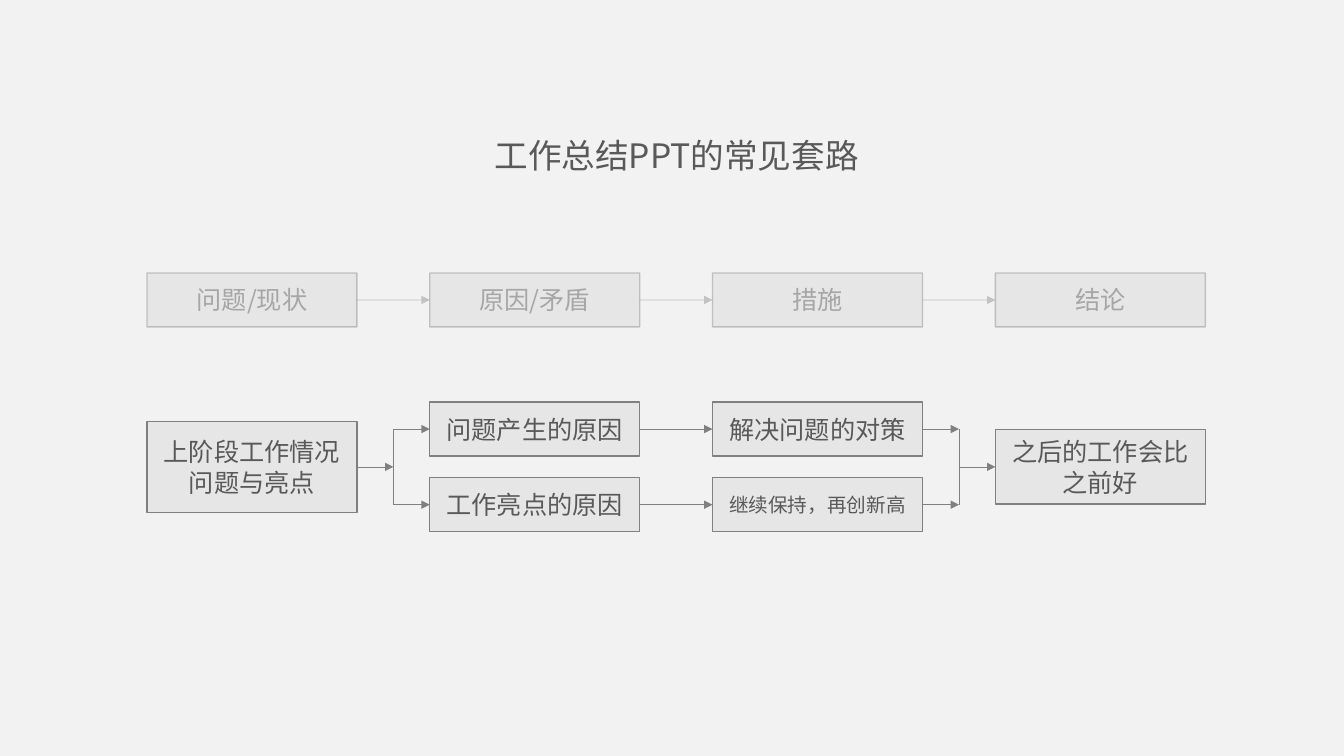
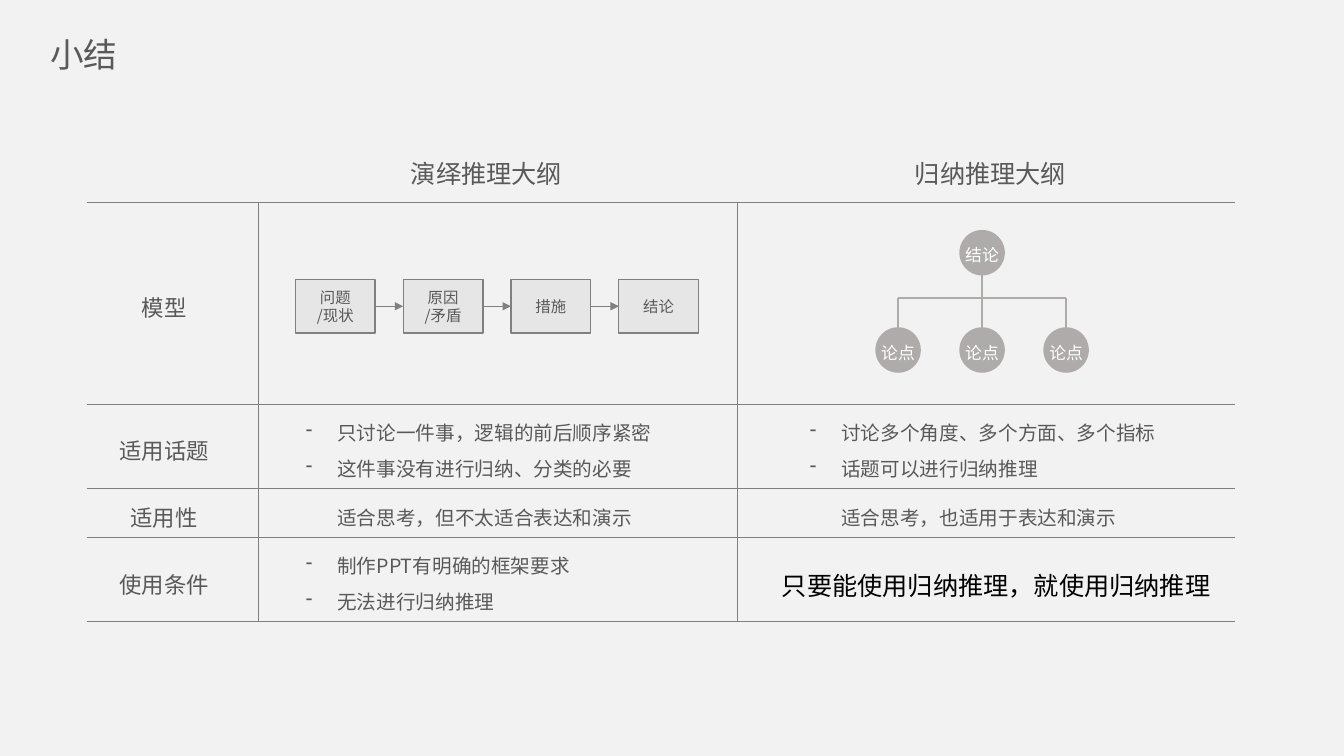
"""Builds two slides on outlining a work summary: a flow and a comparison table."""
from dataclasses import dataclass
from typing import Any, Sequence, Union

from lxml import etree
from pptx import Presentation
from pptx import util as u
from pptx.dml.color import RGBColor
from pptx.enum import shapes, text
from pptx.oxml.ns import qn

FONT = "Noto Sans CJK SC"
PAPER, PANEL, LINE, INK = "F2F2F2", "E7E6E6", "808080", "595959"
FADED, NODE, WHITE, BLACK = "A6A6A6", "AFABAB", "FFFFFF", "000000"
CENTER, LEFT = text.PP_ALIGN.CENTER, text.PP_ALIGN.LEFT
MIDDLE = text.MSO_ANCHOR.MIDDLE
HANGING = 22.5
LOOSE = 1.25
STEPS = (("问题", "/现状"), ("原因", "/矛盾"), ("措施",), ("结论",))
Point = tuple[float, float]


@dataclass(frozen=True)
class Box:
    lines: Sequence[str]
    x: float
    y: float
    width: float
    height: float
    size: float = 18
    ink: str = INK
    alpha: int = 100


@dataclass(frozen=True)
class Entry:
    lines: Sequence[str]
    inset: float
    size: float = 14
    ink: str = INK
    align: Any = LEFT
    indent: float = 0
    bullet: str = ""


def color(code: str) -> RGBColor:
    return RGBColor.from_string(code)


def add_xml(parent: Any, tag: str, **attributes: str) -> Any:
    return etree.SubElement(parent, qn(tag), attributes)


def write(frame: Any, lines: Sequence[str], *, size: float = 18, ink: str = INK,
          align: Any = CENTER, spacing: float = 1, indent: float = 0,
          bullet: str = "", wrap: bool = True) -> None:
    frame.word_wrap = wrap
    for number, line in enumerate(lines):
        paragraph = frame.add_paragraph() if number else frame.paragraphs[0]
        paragraph.alignment = align
        paragraph.line_spacing = spacing
        if indent:
            properties = paragraph._p.get_or_add_pPr()
            properties.set("marL", str(u.Pt(indent)))
            if bullet:
                properties.set("indent", str(-u.Pt(indent)))
                add_xml(properties, "a:buChar", char=bullet)
        run = paragraph.add_run()
        run.text = line
        run.font.size = u.Pt(size)
        run.font.color.rgb = color(ink)
        run.font.name = FONT
        add_xml(run._r.rPr, "a:ea", typeface=FONT)


def stroke(line: Any, ink: str, width: float, alpha: int = 100) -> None:
    line.color.rgb = color(ink)
    line.width = u.Pt(width)
    if alpha < 100:
        tint = line._ln.find(f"{qn('a:solidFill')}/{qn('a:srgbClr')}")
        add_xml(tint, "a:alpha", val=str(alpha * 1000))


def add_title(slide: Any, title: str, x: float, y: float, width: float) -> None:
    holder = slide.shapes.add_textbox(u.Pt(x), u.Pt(y), u.Pt(width), u.Pt(36))
    write(holder.text_frame, [title], size=24)


def add_box(slide: Any, box: Box) -> Any:
    panel = slide.shapes.add_shape(shapes.MSO_SHAPE.RECTANGLE, u.Pt(box.x), u.Pt(box.y),
                                   u.Pt(box.width), u.Pt(box.height))
    panel.shadow.inherit = False
    panel.fill.solid()
    panel.fill.fore_color.rgb = color(PANEL)
    stroke(panel.line, LINE, 1, box.alpha)
    panel.text_frame.vertical_anchor = MIDDLE
    write(panel.text_frame, box.lines, size=box.size, ink=box.ink)
    return panel


def link(slide: Any, start: Union[Point, Any], end: Union[Point, Any], *,
         ink: str = LINE, width: float = 0.5, alpha: int = 100, arrow: bool = True) -> None:
    """Join two points or boxes, leaving a box on the right and entering on the left."""
    ends = [spot if isinstance(spot, tuple) else (0, 0) for spot in (start, end)]
    line = slide.shapes.add_connector(shapes.MSO_CONNECTOR.STRAIGHT,
                                      *(u.Pt(value) for spot in ends for value in spot))
    if not isinstance(start, tuple):
        line.begin_connect(start, 3)
    if not isinstance(end, tuple):
        line.end_connect(end, 1)
    stroke(line.line, ink, width, alpha)
    if arrow:
        add_xml(line.line._ln, "a:tailEnd", type="triangle")
    add_xml(line._element.spPr, "a:effectLst")


def add_chain(slide: Any, boxes: Sequence[Box]) -> list[Any]:
    panels = [add_box(slide, box) for box in boxes]
    for box, start, end in zip(boxes, panels, panels[1:]):
        link(slide, start, end, alpha=box.alpha)
    return panels


def add_node(slide: Any, name: str, x: float, y: float, diameter: float = 32.5) -> None:
    node = slide.shapes.add_shape(shapes.MSO_SHAPE.OVAL, u.Pt(x - diameter / 2),
                                  u.Pt(y - diameter / 2), u.Pt(diameter), u.Pt(diameter))
    node.shadow.inherit = False
    node.fill.solid()
    node.fill.fore_color.rgb = color(NODE)
    node.line.fill.background()
    frame = node.text_frame
    frame.margin_left = frame.margin_right = frame.margin_top = frame.margin_bottom = 0
    frame.vertical_anchor = MIDDLE
    write(frame, [name], size=12, ink=WHITE, spacing=LOOSE, wrap=False)


def add_tree(slide: Any) -> None:
    root_x, root_y, gap, bus_y, leaf_y = 701.5, 180.5, 60, 213, 250
    leaves = [root_x + gap * place for place in (-1, 0, 1)]
    branches = [((leaves[0], bus_y), (leaves[-1], bus_y)), ((root_x, root_y), (root_x, bus_y))]
    branches += [((x, bus_y), (x, leaf_y)) for x in leaves]
    for start, end in branches:
        link(slide, start, end, ink=NODE, width=1.25, arrow=False)
    add_node(slide, "结论", root_x, root_y)
    for x in leaves:
        add_node(slide, "论点", x, leaf_y)


def rule_cell(cell: Any, sides: dict[str, bool]) -> None:
    cell.fill.background()
    properties = cell._tc.get_or_add_tcPr()
    for place, (side, visible) in enumerate(sides.items()):
        edge = etree.Element(qn(f"a:{side}"), w=str(u.Pt(0.5)))
        if visible:
            add_xml(add_xml(edge, "a:solidFill"), "a:srgbClr", val=LINE)
        else:
            add_xml(edge, "a:noFill")
        properties.insert(place, edge)


def add_comparison(slide: Any, rows: Sequence[Sequence[Entry]]) -> None:
    widths, heights = (122.5, 342, 356), (49, 144, 60.5, 35, 60)
    table = slide.shapes.add_table(len(heights), len(widths), u.Pt(62), u.Pt(95.5),
                                   u.Pt(sum(widths)), u.Pt(sum(heights))).table
    table.first_row = table.horz_banding = False
    for column, width in zip(table.columns, widths):
        column.width = u.Pt(width)
    for r, (entries, height) in enumerate(zip(rows, heights)):
        table.rows[r].height = u.Pt(height)
        for c, entry in enumerate(entries):
            cell = table.cell(r, c)
            cell.margin_top = cell.margin_bottom = 0
            cell.margin_left = u.Pt(entry.inset)
            cell.margin_right = u.Pt(0 if c else 12)
            cell.vertical_anchor = MIDDLE
            write(cell.text_frame, entry.lines, size=entry.size, ink=entry.ink,
                  align=entry.align, spacing=LOOSE, indent=entry.indent, bullet=entry.bullet)
            rule_cell(cell, {"lnL": r > 0 and c > 0, "lnR": r > 0 and c < len(widths) - 1,
                             "lnT": r > 0, "lnB": True})


def label(name: str) -> Entry:
    return Entry([name] if name else [], 0, size=16, align=CENTER)


def points(inset: float, *lines: str) -> Entry:
    return Entry(lines, inset, indent=HANGING, bullet="-")


def remark(inset: float, line: str) -> Entry:
    return Entry([line], inset, indent=HANGING)


def build_flow(slide: Any) -> None:
    """Draw the general four-step outline above its use in a work summary."""
    add_title(slide, "工作总结PPT的常见套路", 341.5, 93, 283.5)
    width, height, middle, spread = 150, 38.5, 333.5, 27
    columns = [105 + 202 * place for place in range(4)]
    add_chain(slide, [Box(["".join(step)], x, 195, width, height, ink=FADED, alpha=42)
                      for step, x in zip(STEPS, columns)])

    status = add_box(slide, Box(["上阶段工作情况", "问题与亮点"], columns[0],
                                middle - 32.5, width, 65))
    outlook = add_box(slide, Box(["之后的工作会比之前好"], columns[3],
                                 middle - 26.5, width, 53))
    fork, merge = [(columns[place] + width + columns[place + 1]) / 2 for place in (0, 2)]
    lanes = (("问题产生的原因", "解决问题的对策", 18, middle - spread),
             ("工作亮点的原因", "继续保持，再创新高", 14, middle + spread))
    for cause, measure, size, y in lanes:
        first, last = add_chain(slide, [
            Box([cause], columns[1], y - height / 2, width, height),
            Box([measure], columns[2], y - height / 2, width, height, size)])
        link(slide, (fork, y), first)
        link(slide, last, (merge, y))
    link(slide, status, (fork, middle))
    link(slide, (merge, middle), outlook)
    for x in (fork, merge):
        link(slide, (x, middle - spread), (x, middle + spread), arrow=False)


def build_summary(slide: Any) -> None:
    """Compare the deductive and the inductive outline."""
    add_title(slide, "小结", 16.5, 21, 87)
    deductive, inductive = 34, 52
    add_comparison(slide, (
        (label(""), Entry(["演绎推理大纲"], 109, size=18), Entry(["归纳推理大纲"], 127, size=18)),
        (label("模型"), label(""), label("")),
        (label("适用话题"),
         points(deductive, "只讨论一件事，逻辑的前后顺序紧密", "这件事没有进行归纳、分类的必要"),
         points(inductive, "讨论多个角度、多个方面、多个指标", "话题可以进行归纳推理")),
        (label("适用性"), remark(deductive, "适合思考，但不太适合表达和演示"),
         remark(inductive, "适合思考，也适用于表达和演示")),
        (label("使用条件"), points(deductive, "制作PPT有明确的框架要求", "无法进行归纳推理"),
         Entry(["只要能使用归纳推理，就使用归纳推理"], 32, size=18, ink=BLACK)),
    ))
    add_chain(slide, [Box(step, 211 + 77 * place, 199.5, 57, 38.5, size=11)
                      for place, step in enumerate(STEPS)])
    add_tree(slide)


def main() -> None:
    deck = Presentation()
    deck.slide_width, deck.slide_height = u.Pt(960), u.Pt(540)
    backdrop = deck.slide_master.background.fill
    backdrop.solid()
    backdrop.fore_color.rgb = color(PAPER)
    for build in (build_flow, build_summary):
        build(deck.slides.add_slide(deck.slide_layouts[6]))
    deck.save("out.pptx")


if __name__ == "__main__":
    main()
